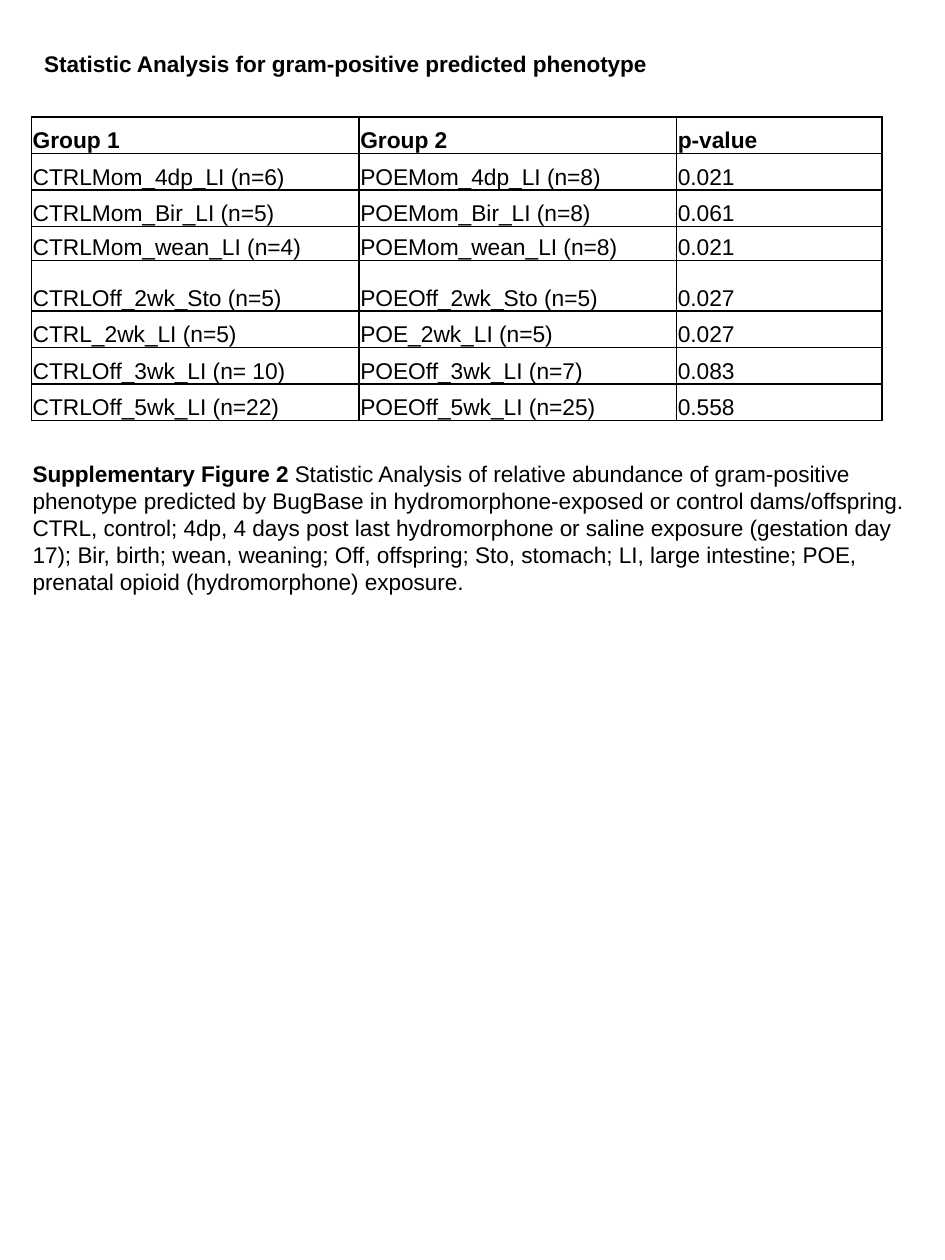
from typing import NamedTuple

from lxml import etree
from pptx import Presentation
from pptx.dml.color import RGBColor
from pptx.enum.text import MSO_ANCHOR, MSO_AUTO_SIZE, PP_ALIGN
from pptx.oxml.ns import qn
from pptx.util import Inches, Pt

TOP, BOTTOM = MSO_ANCHOR.TOP, MSO_ANCHOR.BOTTOM
LEFT = PP_ALIGN.LEFT
FIXED = MSO_AUTO_SIZE.NONE
BLACK = RGBColor(0, 0, 0)
WHITE = RGBColor(255, 255, 255)
FONT = "Arial"


class Row(NamedTuple):
    first: str
    second: str
    value: str
    height: float = 0.29


class Box(NamedTuple):
    left: float
    top: float
    width: float
    height: float


ROWS = [
    Row("Group 1", "Group 2", "p-value"),
    Row("CTRLMom_4dp_LI (n=6)", "POEMom_4dp_LI (n=8)", "0.021"),
    Row("CTRLMom_Bir_LI (n=5)", "POEMom_Bir_LI (n=8)", "0.061"),
    Row("CTRLMom_wean_LI (n=4)", "POEMom_wean_LI (n=8)", "0.021", 0.27),
    Row("CTRLOff_2wk_Sto (n=5)", "POEOff_2wk_Sto (n=5)", "0.027", 0.4),
    Row("CTRL_2wk_LI (n=5)", "POE_2wk_LI (n=5)", "0.027"),
    Row("CTRLOff_3wk_LI (n= 10)", "POEOff_3wk_LI (n=7)", "0.083"),
    Row("CTRLOff_5wk_LI (n=22)", "POEOff_5wk_LI (n=25)", "0.558"),
]
WIDTHS = [2.6, 2.52, 1.63]
TITLE = Box(0.25, 0.35, 5.97, 0.32)
GRID = Box(0.25, 0.93, sum(WIDTHS), sum(row.height for row in ROWS))
LEGEND = Box(0.16, 3.6, 7.18, 1.4)
LEGEND_TEXT = (
    "Statistic Analysis of relative abundance of gram-positive phenotype "
    "predicted by BugBase in hydromorphone-exposed or control dams/offspring. "
    "CTRL, control; 4dp, 4 days post last hydromorphone or saline exposure "
    "(gestation day 17); Bir, birth; wean, weaning; Off, offspring; Sto, stomach; "
    "LI, large intestine; POE, prenatal opioid (hydromorphone) exposure."
)


def write(frame, text: str, *, size: float = 12.9, bold: bool = False) -> None:
    para = frame.paragraphs[0]
    para.alignment = LEFT
    run = para.add_run()
    run.text = text
    run.font.name = FONT
    run.font.size = Pt(size)
    run.font.bold = bold
    run.font.color.rgb = BLACK


def place(shape, box: Box) -> None:
    shape.left, shape.top, shape.width, shape.height = map(Inches, box)
    frame = shape.text_frame
    frame.word_wrap = True
    frame.auto_size = FIXED
    frame.vertical_anchor = TOP


def border(cell) -> None:
    props = cell._tc.get_or_add_tcPr()
    for spot, side in enumerate(("a:lnL", "a:lnR", "a:lnT", "a:lnB")):
        line = etree.Element(qn(side), w=str(Pt(1)))
        fill = etree.SubElement(line, qn("a:solidFill"))
        etree.SubElement(fill, qn("a:srgbClr"), val=str(BLACK))
        props.insert(spot, line)


def draw_cell(cell, text: str, bold: bool) -> None:
    cell.fill.solid()
    cell.fill.fore_color.rgb = WHITE
    cell.margin_left = cell.margin_right = cell.margin_top = Inches(0.01)
    cell.margin_bottom = 0
    cell.vertical_anchor = BOTTOM
    write(cell.text_frame, text, size=13, bold=bold)
    border(cell)


def draw_grid(slide) -> None:
    frame = slide.shapes.add_table(len(ROWS), len(WIDTHS), *map(Inches, GRID))
    table = frame.table
    table.horz_banding = False
    for col, width in zip(table.columns, WIDTHS):
        col.width = Inches(width)
    for r, row in enumerate(ROWS):
        table.rows[r].height = Inches(row.height)
        for c, text in enumerate((row.first, row.second, row.value)):
            draw_cell(table.cell(r, c), text, bold=r == 0)


def main() -> None:
    deck = Presentation()
    deck.slide_width, deck.slide_height = Inches(7.5), Inches(10)
    slide = deck.slides.add_slide(deck.slide_layouts[5])
    title = slide.shapes.title
    place(title, TITLE)
    write(title.text_frame, "Statistic Analysis for gram-positive predicted phenotype", bold=True)
    draw_grid(slide)
    legend = slide.shapes.add_textbox(*map(Inches, LEGEND))
    place(legend, LEGEND)
    write(legend.text_frame, "Supplementary Figure 2 ", bold=True)
    write(legend.text_frame, LEGEND_TEXT)
    deck.save("out.pptx")


if __name__ == "__main__":
    main()
